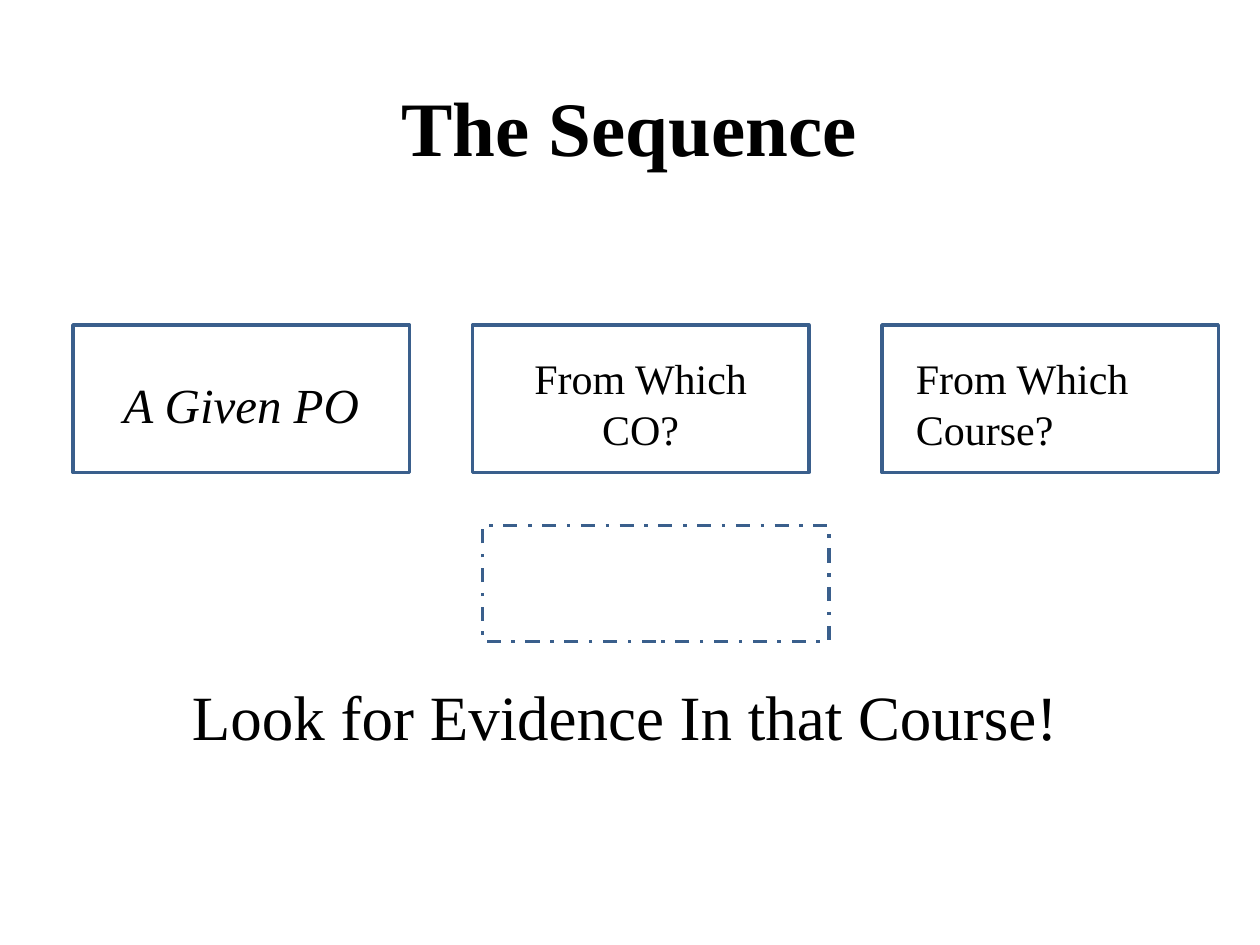
from dataclasses import dataclass

from pptx import Presentation
from pptx.dml.color import RGBColor
from pptx.enum.dml import MSO_LINE
from pptx.enum.shapes import MSO_SHAPE
from pptx.enum.text import MSO_AUTO_SIZE, PP_ALIGN
from pptx.util import Inches, Pt


@dataclass(frozen=True)
class Theme:
    font: str = "Times New Roman"
    ink: RGBColor = RGBColor(0x00, 0x00, 0x00)
    paper: RGBColor = RGBColor(0xFF, 0xFF, 0xFF)
    border: RGBColor = RGBColor(0x3A, 0x5F, 0x8C)
    border_width: Pt = Pt(2)
    title: Pt = Pt(44)
    conclusion: Pt = Pt(36)
    start: Pt = Pt(28)
    question: Pt = Pt(24)


theme = Theme()
presentation = Presentation()
presentation.slide_width = Inches(10)
presentation.slide_height = Inches(7.5)
slide = presentation.slides.add_slide(presentation.slide_layouts[6])


def add_text(text, left, top, width, height, *, size,
             bold=False, italic=False, align=PP_ALIGN.CENTER):
    label = slide.shapes.add_textbox(
        Inches(left), Inches(top), Inches(width), Inches(height))
    frame = label.text_frame
    frame.word_wrap = True
    frame.auto_size = MSO_AUTO_SIZE.SHAPE_TO_FIT_TEXT
    paragraph = frame.paragraphs[0]
    paragraph.alignment = align
    run = paragraph.add_run()
    run.text = text
    run.font.name = theme.font
    run.font.size = size
    run.font.bold = bold
    run.font.italic = italic
    run.font.color.rgb = theme.ink


def add_frame(left, top, width, height, dash=None):
    frame = slide.shapes.add_shape(
        MSO_SHAPE.RECTANGLE, Inches(left), Inches(top), Inches(width), Inches(height))
    frame.shadow.inherit = False
    frame.fill.solid()
    frame.fill.fore_color.rgb = theme.paper
    frame.line.color.rgb = theme.border
    frame.line.width = theme.border_width
    if dash is not None:
        frame.line.dash_style = dash


# Frames of the three steps
step_lefts = (0.58, 3.75, 7)
for step_left in step_lefts:
    add_frame(step_left, 2.58, 2.67, 1.17)

# Step texts, inset from their frames
inset = 0.17
po_left, co_left, course_left = (left + inset for left in step_lefts)
add_text("A Given PO", po_left, 2.92, 2.33, 0.57, size=theme.start, italic=True)
add_text("From Which CO?", co_left, 2.75, 2.33, 0.91, size=theme.question)
add_text("From Which Course?", course_left, 2.75, 2.42, 0.91,
         size=theme.question, align=PP_ALIGN.LEFT)

# Conclusion and title
add_text("Look for Evidence In that Course!", 1, 5.33, 7.92, 0.71, size=theme.conclusion)
add_text("The Sequence", 2.08, 0.58, 5.83, 0.84, size=theme.title, bold=True)

# Empty dashed frame under the middle step
add_frame(3.83, 4.17, 2.75, 0.92, dash=MSO_LINE.DASH_DOT)

presentation.save("out.pptx")
